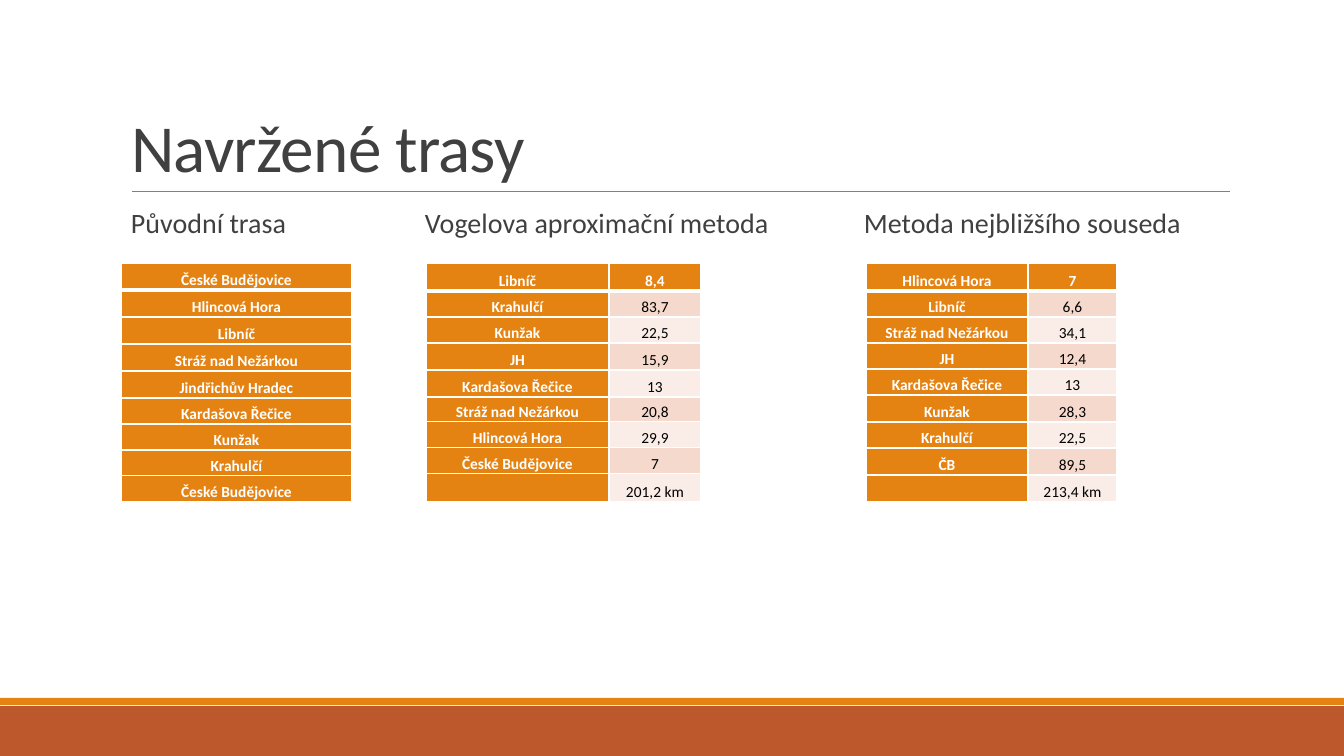
from lxml.etree import SubElement
from pptx import Presentation
from pptx.dml.color import RGBColor
from pptx.enum.shapes import MSO_CONNECTOR, MSO_SHAPE
from pptx.enum.text import MSO_ANCHOR, MSO_AUTO_SIZE, PP_ALIGN
from pptx.oxml.ns import qn
from pptx.util import Pt

EMU_PER_PX = 914400 / 100.8
ORANGE, RUST, WHITE, BLACK = "E48312", "BD582C", "FFFFFF", "000000"
GRAY, RULE = "404040", "808080"
BANDS = ("FAEDE7", "F5D9CC")
HEADINGS = ("Původní trasa", "Vogelova aproximační metoda", "Metoda nejbližšího souseda")
HEADING_TABS = (304, 743)
TABLE_TOP = 263
ROUTES = (
    {
        "left": 121, "columns": (231,),
        "rows": (27, 27, 27, 27, 27, 26, 26, 26, 26),
        "stops": (("České Budějovice",), ("Hlincová Hora",), ("Libníč",),
                  ("Stráž nad Nežárkou",), ("Jindřichův Hradec",), ("Kardašova Řečice",),
                  ("Kunžak",), ("Krahulčí",), ("České Budějovice",)),
    },
    {
        "left": 426, "columns": (183, 92),
        "rows": (28, 26, 26, 27, 27, 25, 26, 26, 28),
        "stops": (("Libníč", "8,4"), ("Krahulčí", "83,7"), ("Kunžak", "22,5"),
                  ("JH", "15,9"), ("Kardašova Řečice", "13"), ("Stráž nad Nežárkou", "20,8"),
                  ("Hlincová Hora", "29,9"), ("České Budějovice", "7"), ("", "201,2 km")),
    },
    {
        "left": 866, "columns": (162, 89),
        "rows": (28, 26, 26, 26, 26, 27, 26, 27, 27),
        "stops": (("Hlincová Hora", "7"), ("Libníč", "6,6"), ("Stráž nad Nežárkou", "34,1"),
                  ("JH", "12,4"), ("Kardašova Řečice", "13"), ("Kunžak", "28,3"),
                  ("Krahulčí", "22,5"), ("ČB", "89,5"), ("", "213,4 km")),
    },
)


def px(length):
    """Turn pixels into EMU."""
    return round(length * EMU_PER_PX)


def color(hex_text):
    """Turn a hex string into a colour."""
    return RGBColor.from_string(hex_text)


def apply_format(target, values):
    """Set every attribute named in a dict."""
    for name, value in values.items():
        setattr(target, name, value)


def add_text(paragraph, text, size, hex_text, bold=False):
    """Add a formatted run and return it."""
    run = paragraph.add_run()
    run.text = text
    apply_format(run.font, {"name": "Calibri", "size": Pt(size), "bold": bold})
    run.font.color.rgb = color(hex_text)
    return run


def add_band(slide, left, top, width, height, hex_text):
    """Draw a plain filled band."""
    shape = slide.shapes.add_shape(
        MSO_SHAPE.RECTANGLE, *map(px, (left, top, width, height)))
    shape.shadow.inherit = False
    shape.fill.solid()
    shape.fill.fore_color.rgb = color(hex_text)
    shape.line.fill.background()


def add_rule(slide, left, top, width):
    """Draw the thin rule below the title."""
    connector = slide.shapes.add_connector(
        MSO_CONNECTOR.STRAIGHT, px(left), px(top), px(left + width), px(top))
    connector.line.width = Pt(0.5)
    connector.line.color.rgb = color(RULE)
    SubElement(connector._element.spPr, qn("a:effectLst"))


def format_title(slide, left, top, width, height):
    """Place and fill the title placeholder."""
    title = slide.shapes.title
    apply_format(title, {"left": px(left), "top": px(top),
                         "width": px(width), "height": px(height)})
    apply_format(title.text_frame, {"vertical_anchor": MSO_ANCHOR.BOTTOM, "word_wrap": True,
                                    "auto_size": MSO_AUTO_SIZE.NONE})
    paragraph = title.text_frame.paragraphs[0]
    apply_format(paragraph, {"alignment": PP_ALIGN.LEFT, "line_spacing": 0.85})
    run = add_text(paragraph, "Navržené trasy", 48, GRAY)
    run.font._element.set("spc", "-50")


def add_headings(slide, left, top, width, height):
    """Write the table headings on one line with tab stops."""
    box = slide.shapes.add_textbox(*map(px, (left, top, width, height)))
    apply_format(box.text_frame, {"word_wrap": True, "margin_left": px(10), "margin_right": 0})
    paragraph = box.text_frame.paragraphs[0]
    paragraph.line_spacing = 0.9
    tabs = SubElement(paragraph._p.get_or_add_pPr(), qn("a:tabLst"))
    for position in HEADING_TABS:
        SubElement(tabs, qn("a:tab"), pos=str(px(position - 10)), algn="l")
    add_text(paragraph, "\t".join(HEADINGS), 20, GRAY)


def add_borders(cell, top, bottom):
    """Give a cell white borders, with top and bottom widths in points."""
    properties = cell._tc.get_or_add_tcPr()
    for side, width in {"lnL": 1, "lnR": 1, "lnT": top, "lnB": bottom}.items():
        line = SubElement(properties, qn(f"a:{side}"), w=str(Pt(width)))
        fill = SubElement(line, qn("a:solidFill"))
        SubElement(fill, qn("a:srgbClr"), val=WHITE)


def format_cell(cell, text, row, column):
    """Fill one cell by its place in the table."""
    emphasized = row == 0 or column == 0
    add_borders(cell, 3 if row == 1 else 1, 3 if row == 0 else 1)
    cell.fill.solid()
    cell.fill.fore_color.rgb = color(ORANGE if emphasized else BANDS[row % 2])
    apply_format(cell, {"vertical_anchor": MSO_ANCHOR.BOTTOM, "margin_left": px(5),
                        "margin_right": px(5), "margin_top": 0, "margin_bottom": 0})
    paragraph = cell.text_frame.paragraphs[0]
    apply_format(paragraph, {"alignment": PP_ALIGN.CENTER, "line_spacing": 1.15})
    if text:
        add_text(paragraph, text, 11, WHITE if emphasized else BLACK, emphasized)
    else:
        SubElement(paragraph._p, qn("a:endParaRPr"), sz="1100")


def add_route_table(slide, left, top, columns, rows, stops):
    """Build the table of one route."""
    frame = slide.shapes.add_table(
        len(rows), len(columns), px(left), px(top), px(sum(columns)), px(sum(rows)))
    table = frame.table
    apply_format(table, {"first_row": False, "horz_banding": False})
    for column, width in zip(table.columns, columns):
        column.width = px(width)
    for row, height in zip(table.rows, rows):
        row.height = px(height)
    for row, values in enumerate(stops):
        for column, text in enumerate(values):
            format_cell(table.cell(row, column), text, row, column)


def build_routes_slide(presentation):
    """Build the slide comparing the routes."""
    slide = presentation.slides.add_slide(presentation.slide_layouts[5])
    add_band(slide, 0, 706, 1344, 50, RUST)
    add_band(slide, 0, 698, 1344, 7, ORANGE)
    add_rule(slide, 132, 191, 1098)
    format_title(slide, 121, 31, 1109, 160)
    add_headings(slide, 121, 204, 1109, 44)
    for route in ROUTES:
        add_route_table(slide, top=TABLE_TOP, **route)


def main():
    """Create and save the presentation."""
    presentation = Presentation()
    apply_format(presentation, {"slide_width": px(1344), "slide_height": px(756)})
    build_routes_slide(presentation)
    presentation.save("out.pptx")


if __name__ == "__main__":
    main()
